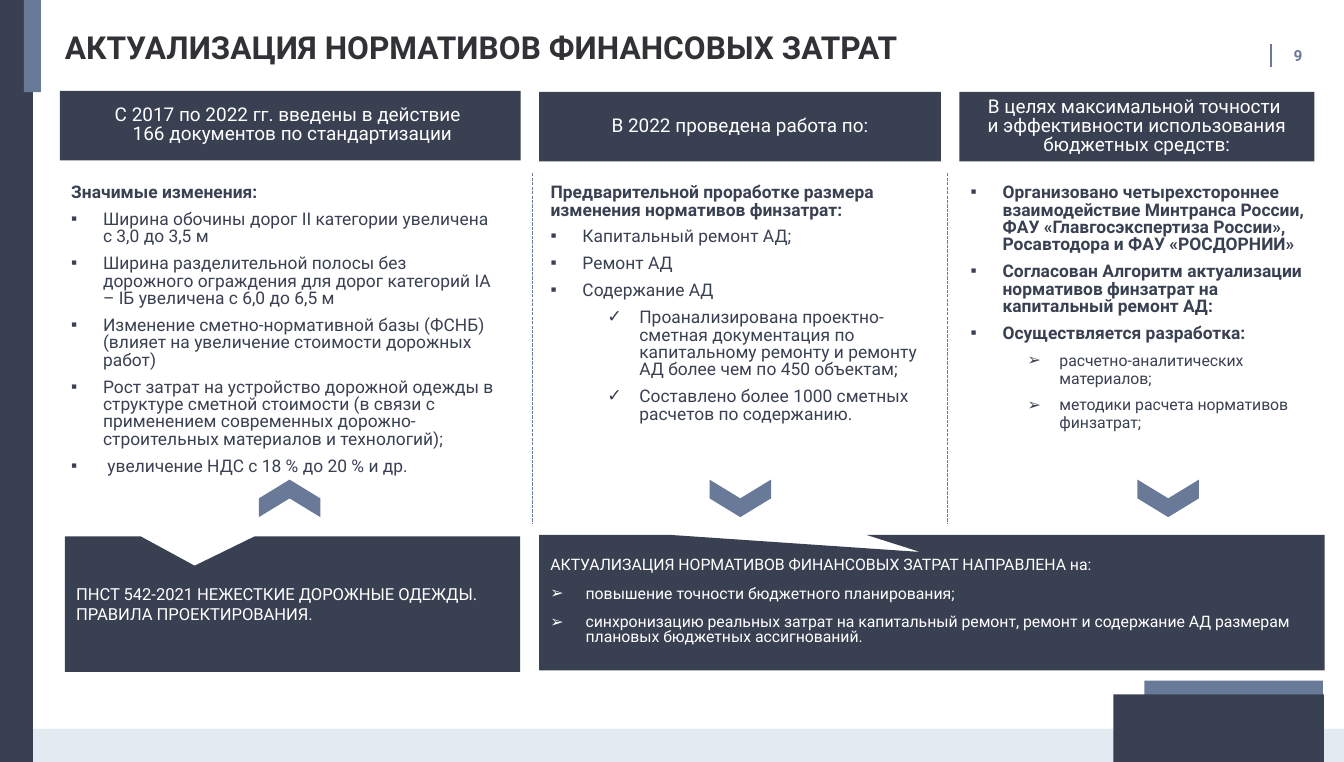
"""Build the slide on updating the road funding norms."""
import lxml.etree
import pptx
import pptx.dml.color
import pptx.enum.dml
import pptx.enum.shapes
import pptx.enum.text
import pptx.oxml.ns
import pptx.util

COLORS = {"dark": "394051", "accent": "697A98", "band": "E3EBF2", "title": "303236", "white": "FFFFFF"}
SHAPES = pptx.enum.shapes.MSO_SHAPE
ALIGN = pptx.enum.text.PP_ALIGN
ANCHOR = pptx.enum.text.MSO_ANCHOR
qualified = pptx.oxml.ns.qn

presentation = pptx.Presentation()
presentation.slide_width = pptx.util.Cm(30)
presentation.slide_height = pptx.util.Cm(17)
slide = presentation.slides.add_slide(presentation.slide_layouts.get_by_name("Comparison"))


def place(shape, left, top, width, height, fill=None, rotation=0):
    """Position a shape in percent of the slide and give it a plain fill."""
    shape.left = int(presentation.slide_width * left / 100)
    shape.top = int(presentation.slide_height * top / 100)
    shape.width = int(presentation.slide_width * width / 100)
    shape.height = int(presentation.slide_height * height / 100)
    if fill:
        shape.shadow.inherit = False
        shape.fill.solid()
        shape.fill.fore_color.rgb = pptx.dml.color.RGBColor.from_string(COLORS[fill])
        shape.line.fill.background()
        shape.rotation = rotation
    return shape


def write(shape, text, size=11, color="dark", bold=False, align=ALIGN.LEFT, anchor=ANCHOR.TOP,
          spacing=None, before=0, bullet=None, margin=0, hanging=0, level=0):
    """Add one formatted paragraph to a shape."""
    frame = shape.text_frame
    frame.word_wrap = True
    frame.auto_size = pptx.enum.text.MSO_AUTO_SIZE.NONE
    frame.vertical_anchor = anchor
    first = not frame.text
    paragraph = frame.paragraphs[0] if first else frame.add_paragraph()
    paragraph.text = text
    paragraph.level = level
    paragraph.alignment = align
    properties = paragraph._p.get_or_add_pPr()
    properties.set("marL", str(pptx.util.Inches(margin)))
    properties.set("indent", str(-pptx.util.Inches(hanging)))
    if bullet:
        bullet_color = lxml.etree.SubElement(properties, qualified("a:buClr"))
        lxml.etree.SubElement(bullet_color, qualified("a:srgbClr"), val=COLORS[color])
        lxml.etree.SubElement(properties, qualified("a:buFont"), typeface="Arial")
        lxml.etree.SubElement(properties, qualified("a:buChar"), char=bullet)
    else:
        lxml.etree.SubElement(properties, qualified("a:buNone"))
    paragraph.space_before = pptx.util.Pt(0 if first else before)
    if spacing:
        paragraph.line_spacing = pptx.util.Pt(spacing)
    for run in paragraph.runs:
        run.font.name = "Roboto"
        run.font.size = pptx.util.Pt(size)
        run.font.bold = bold
        run.font.color.rgb = pptx.dml.color.RGBColor.from_string(COLORS[color])


for left, top, width, height, fill in [
    (0, 95.66, 100, 4.34, "band"),
    (0, 0, 2.46, 100, "dark"),
    (85.14, 89.31, 13.29, 6.28, "accent"),
    (82.85, 91.11, 15.66, 8.89, "dark"),
    (1.78, 0, 1.27, 12.1, "accent"),
]:
    place(slide.shapes.add_shape(SHAPES.RECTANGLE, 0, 0, 0, 0), left, top, width, height, fill)

title = place(slide.shapes.title, 4.83, 3.5, 91.36, 4.93)
title_frame = title.text_frame
title_frame.margin_left = title_frame.margin_top = title_frame.margin_right = title_frame.margin_bottom = 0
write(title, "АКТУАЛИЗАЦИЯ НОРМАТИВОВ ФИНАНСОВЫХ ЗАТРАТ", size=20, color="title", bold=True, spacing=25)

page_number = place(slide.shapes.add_textbox(0, 0, 0, 0), 95.17, 6.13, 4.5, 2.24)
write(page_number, "9", size=9.7, color="accent", bold=True, anchor=ANCHOR.MIDDLE, margin=0.03)

list_line = {"spacing": 11, "before": 6}
heading = {**list_line, "bold": True}
item = {**list_line, "bullet": "▪", "margin": 0.28, "hanging": 0.28}
bold_item = {**item, "bold": True}
check_item = {**item, "bullet": "✓", "margin": 0.78, "level": 1}
arrow_item = {**check_item, "bullet": "➢", "size": 10}

columns = [
    {
        "left": 4.45, "header_top": 11.93, "header_width": 34.29, "list_width": 33.53,
        "chevron": 21.55, "rotation": 270,
        "header": ["С 2017 по 2022 гг. введены в действие ", " 166 документов по стандартизации"],
        "list": [
            ("Значимые изменения:", heading),
            ("Ширина обочины дорог II категории увеличена \nс 3,0 до 3,5 м", item),
            ("Ширина разделительной полосы без дорожного ограждения для дорог категорий IА – IБ "
             "увеличена с 6,0 до 6,5 м", item),
            ("Изменение сметно-нормативной базы (ФСНБ) (влияет на увеличение стоимости дорожных работ)", item),
            ("Рост затрат на устройство дорожной одежды в структуре сметной стоимости (в связи с "
             "применением современных дорожно-строительных материалов и технологий);", item),
            (" увеличение НДС с 18 % до 20 % и др.", item),
        ],
    },
    {
        "left": 40.12, "header_top": 12.07, "header_width": 29.89, "list_width": 29.89,
        "chevron": 55.08, "rotation": 90,
        "header": ["В 2022 проведена работа по:"],
        "list": [
            ("Предварительной проработке размера изменения нормативов финзатрат:", heading),
            ("Капитальный ремонт АД;", item),
            ("Ремонт АД", item),
            ("Содержание АД", item),
            ("Проанализирована проектно-сметная документация по капитальному ремонту и ремонту АД "
             "более чем по 450 объектам;", check_item),
            ("Составлено более 1000 сметных расчетов по содержанию.", check_item),
        ],
    },
    {
        "left": 71.38, "header_top": 12.07, "header_width": 26.42, "list_width": 27.18,
        "chevron": 86.92, "rotation": 90,
        "header": ["В целях максимальной точности \nи эффективности использования бюджетных средств:"],
        "list": [
            ("Организовано четырехстороннее взаимодействие Минтранса России, \n"
             "ФАУ «Главгосэкспертиза России», Росавтодора и ФАУ «РОСДОРНИИ»", bold_item),
            ("Согласован Алгоритм актуализации нормативов финзатрат на капитальный ремонт АД:", bold_item),
            ("Осуществляется разработка:", bold_item),
            ("расчетно-аналитических материалов;", arrow_item),
            ("методики расчета нормативов финзатрат;", arrow_item),
        ],
    },
]

chevron_width, chevron_height, chevron_middle = 2.79, 8.07, 65.4
body_placeholders = list(slide.placeholders)[1:]
for column, body in zip(columns, body_placeholders):
    header = slide.shapes.add_shape(SHAPES.RECTANGLE, 0, 0, 0, 0)
    place(header, column["left"], column["header_top"], column["header_width"], 9.12, "dark")
    for text in column["header"]:
        write(header, text, size=12, color="white", align=ALIGN.CENTER, anchor=ANCHOR.MIDDLE, spacing=12)
    place(body, column["left"], 23.5, column["list_width"], 42)
    for text, style in column["list"]:
        write(body, text, **style)
    chevron = slide.shapes.add_shape(SHAPES.CHEVRON, 0, 0, 0, 0)
    place(chevron, column["chevron"] - chevron_width / 2, chevron_middle - chevron_height / 2,
          chevron_width, chevron_height, "accent", column["rotation"])

unused_placeholder = body_placeholders[-1]._element
unused_placeholder.getparent().remove(unused_placeholder)

callout_line = {"size": 10, "color": "white", "anchor": ANCHOR.MIDDLE, "spacing": 9, "before": 9}
callout_item = {**callout_line, "bullet": "➢", "margin": 0.31, "hanging": 0.31}
callouts = [
    (4.83, 70.4, 33.87, (-0.215, -0.284), [
        ("ПНСТ 542-2021 НЕЖЕСТКИЕ ДОРОЖНЫЕ ОДЕЖДЫ. ПРАВИЛА ПРОЕКТИРОВАНИЯ.",
         {"size": 10.5, "color": "white", "anchor": ANCHOR.MIDDLE}),
    ]),
    (40.12, 70.2, 58.43, (-0.015, -0.374), [
        ("АКТУАЛИЗАЦИЯ НОРМАТИВОВ ФИНАНСОВЫХ ЗАТРАТ НАПРАВЛЕНА на:", callout_line),
        ("повышение точности бюджетного планирования;", callout_item),
        ("синхронизацию реальных затрат на капитальный ремонт, ремонт и содержание АД размерам "
         "плановых бюджетных ассигнований.", callout_item),
    ]),
]
for left, top, width, pointer, paragraphs in callouts:
    callout = slide.shapes.add_shape(SHAPES.RECTANGULAR_CALLOUT, 0, 0, 0, 0)
    place(callout, left, top, width, 17.79, "dark")
    callout.adjustments[0], callout.adjustments[1] = pointer
    for text, style in paragraphs:
        write(callout, text, **style)

for x, top, bottom, weight, dash in [
    (94.58, 5.83, 8.82, 1.5, None),
    (39.63, 22.72, 68.76, 0.7, pptx.enum.dml.MSO_LINE.SQUARE_DOT),
    (70.53, 22.72, 68.76, 0.7, pptx.enum.dml.MSO_LINE.SQUARE_DOT),
]:
    divider = slide.shapes.add_connector(pptx.enum.shapes.MSO_CONNECTOR.STRAIGHT, 0, 0, 0, 0)
    place(divider, x, top, 0, bottom - top)
    divider.line.color.rgb = pptx.dml.color.RGBColor.from_string(COLORS["accent"])
    divider.line.width = pptx.util.Pt(weight)
    divider.line.dash_style = dash
    lxml.etree.SubElement(divider._element.spPr, qualified("a:effectLst"))

presentation.save("out.pptx")
